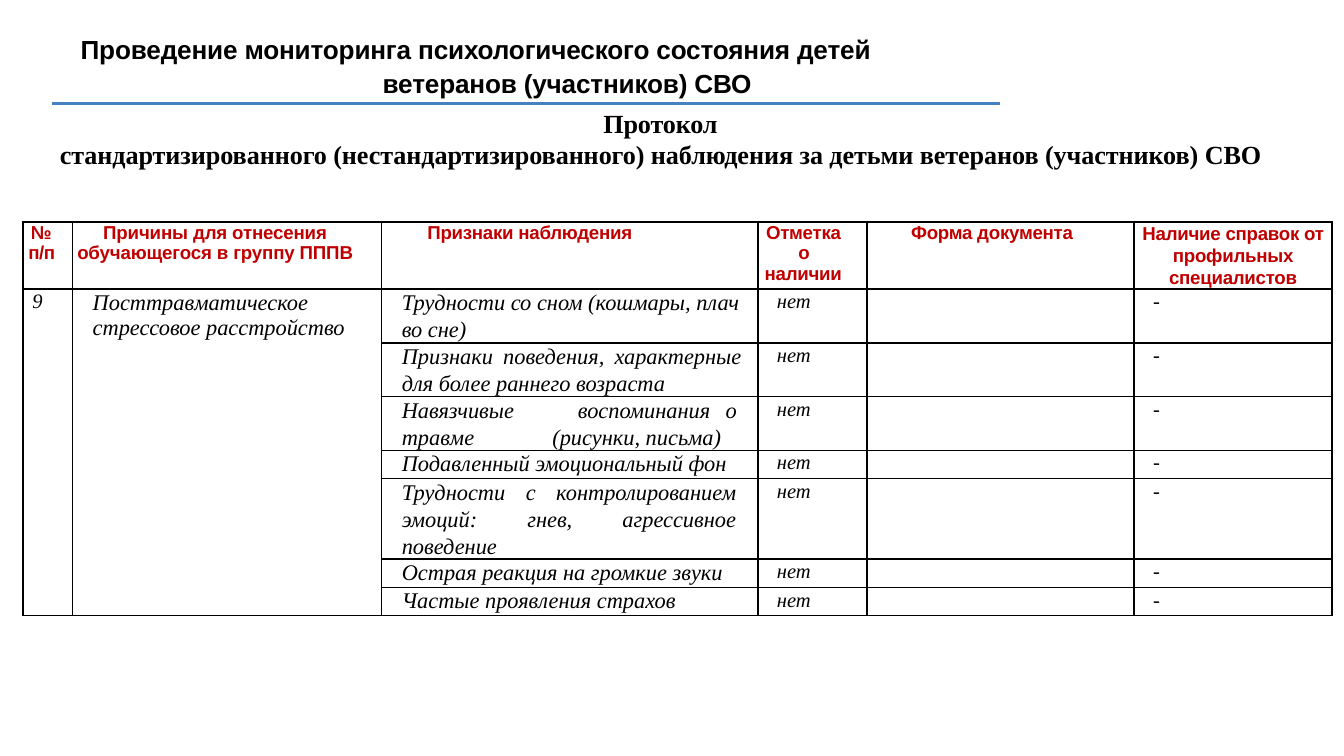
from lxml.etree import SubElement
from pptx import Presentation
from pptx.dml.color import RGBColor
from pptx.enum.shapes import MSO_CONNECTOR
from pptx.enum.text import MSO_ANCHOR, PP_ALIGN as AL
from pptx.oxml.ns import qn
from pptx.util import Inches, Pt

BLACK, RED, BLUE = "000000", "C00000", "4480C2"
SANS, SERIF = "Arial", "Times New Roman"
SLIDE_WIDTH = 10
SLIDE_HEIGHT = SLIDE_WIDTH * 9 / 16

TITLE = [
    dict(text="Проведение мониторинга психологического состояния детей",
         left=0.01, before=1.1),
    dict(text="ветеранов (участников) СВО", align=AL.CENTER, before=1.1),
]
SUBTITLE = [
    dict(text="Протокол", align=AL.CENTER, before=1.1),
    dict(text="стандартизированного (нестандартизированного) наблюдения "
              "за детьми ветеранов (участников) СВО", align=AL.CENTER, spc=-0.05),
]
HEADERS = [
    [dict(text="№", left=0.06, spc=-0.5), dict(text="п/п", left=0.04, spc=-0.2)],
    [dict(text=t, align=AL.CENTER, right=0.18, spc=-0.05)
     for t in ("Причины для отнесения", "обучающегося в группу ПППВ")],
    [dict(text="Признаки наблюдения", left=0.34)],
    [dict(text="Отметка", left=0.06), dict(text="о наличии", left=0.05, first=0.25)],
    [dict(text="Форма документа", left=0.33)],
    [dict(text="Наличие справок от профильных специалистов",
          align=AL.CENTER, left=0.04, right=0.04, line=12)],
]
NUMBER = "9"
REASON = ["Посттравматическое", "стрессовое расстройство"]
SIGNS = [  # text, row height in text lines, paragraph options
    ("Трудности со сном (кошмары, плач во сне)", 2, {}),
    ("Признаки поведения, характерные для более раннего возраста", 2,
     dict(align=AL.JUSTIFY, right=0.12)),
    ("Навязчивые\t\tвоспоминания\tо травме\t(рисунки, письма)", 2,
     dict(tabs=(1.12, 1.31, 2.41))),
    ("Подавленный эмоциональный фон", 1, {}),
    ("Трудности с контролированием эмоций: гнев, агрессивное поведение", 3,
     dict(align=AL.JUSTIFY, right=0.16)),
    ("Острая реакция на громкие звуки", 1, {}),
    ("Частые проявления страхов", 1, {}),
]
MARK, CERTIFICATE = "нет", "-"
COLUMNS = (0.37, 2.3, 2.8, 0.81, 1.99, 1.47)
HEADER_HEIGHT, LINE_HEIGHT = 0.5, 0.2

HEADER_STYLE = dict(font=SANS, size=10, color=RED, bold=True, line=11.8)
BODY_STYLE = dict(font=SERIF, size=12, italic=True, left=0.15, line=14.4, spc=0)
SMALL_STYLE = dict(BODY_STYLE, size=11, left=0.14, line=12.9)


def rgb(color):
    return RGBColor.from_string(color)


def write_paragraph(p, text, font, size, color=BLACK, bold=False, italic=False,
                    align=AL.LEFT, left=0, right=0, first=0, line=None,
                    before=0, spc=-0.1, tabs=()):
    """Lengths are inches; size, line, before and spc are points."""
    p.alignment = align
    p.space_before = Pt(before)
    p.line_spacing = Pt(line) if line else 1.0
    pPr = p._p.get_or_add_pPr()
    for name, value in (("marL", left), ("marR", right), ("indent", first)):
        if value:
            pPr.set(name, str(Inches(value)))
    if tabs:
        tab_list = SubElement(pPr, qn("a:tabLst"))
        for pos in tabs:
            SubElement(tab_list, qn("a:tab"), pos=str(Inches(pos)), algn="l")
    if not text:
        SubElement(p._p, qn("a:endParaRPr"), sz=str(size * 100))
        return
    r = p.add_run()
    r.text = text
    f = r.font
    f.name, f.size, f.bold, f.italic = font, Pt(size), bold, italic
    f.color.rgb = rgb(color)
    r._r.get_or_add_rPr().set("spc", str(round(spc * 100)))


def write(tf, paragraphs, **style):
    for i, item in enumerate(paragraphs):
        p = tf.add_paragraph() if i else tf.paragraphs[0]
        options = {**style, **item}
        if i and options.get("line"):
            options["line"] -= 1
        write_paragraph(p, **options)


def place_text(sp, box, paragraphs, font):
    sp.left, sp.top, sp.width, sp.height = map(Inches, box)
    tf = sp.text_frame
    tf.word_wrap = True
    tf.vertical_anchor = MSO_ANCHOR.TOP
    tf.margin_left = tf.margin_right = tf.margin_bottom = 0
    tf.margin_top = Inches(0.01)
    write(tf, paragraphs, font=font, size=14, bold=True)


def format_cell(cell):
    """Remove margins and fill, and draw a black border on every side."""
    cell.margin_left = cell.margin_right = cell.margin_top = cell.margin_bottom = 0
    tcPr = cell._tc.get_or_add_tcPr()
    for side in ("lnL", "lnR", "lnT", "lnB"):
        ln = SubElement(tcPr, qn("a:" + side), w=str(Pt(1)))
        fill = SubElement(ln, qn("a:solidFill"))
        SubElement(fill, qn("a:srgbClr"), val=BLACK)
    cell.fill.background()


def add_protocol_table(s):
    heights = [HEADER_HEIGHT] + [max(n * LINE_HEIGHT, 0.21) for _, n, _ in SIGNS]
    frame = s.shapes.add_table(len(heights), len(COLUMNS), Inches(0.17), Inches(1.65),
                               Inches(sum(COLUMNS)), Inches(sum(heights)))
    table = frame.table
    table.first_row = table.horz_banding = False
    for column, width in zip(table.columns, COLUMNS):
        column.width = Inches(width)
    for row, height in zip(table.rows, heights):
        row.height = Inches(height)
    for cell in table.iter_cells():
        format_cell(cell)
    for col in (0, 1):
        table.cell(1, col).merge(table.cell(len(SIGNS), col))

    for col, paragraphs in enumerate(HEADERS):
        write(table.cell(0, col).text_frame, paragraphs, **HEADER_STYLE)
    for row, (sign, lines, options) in enumerate(SIGNS, 1):
        number = dict(text=NUMBER if row == 1 else "", left=0.07)
        reason = [dict(text=t) for t in (REASON if row == 1 else [""])]
        sign_line = 13.8 if lines == 1 else 14.4
        contents = [
            ([number], SMALL_STYLE),
            (reason, BODY_STYLE),
            ([dict(text=sign, line=sign_line, **options)], BODY_STYLE),
            ([dict(text=MARK)], SMALL_STYLE),
            ([dict(text="")], SMALL_STYLE),
            ([dict(text=CERTIFICATE)], SMALL_STYLE),
        ]
        for col, (paragraphs, style) in enumerate(contents):
            write(table.cell(row, col).text_frame, paragraphs, **style)


def main():
    prs = Presentation()
    prs.slide_width, prs.slide_height = Inches(SLIDE_WIDTH), Inches(SLIDE_HEIGHT)
    s = prs.slides.add_slide(prs.slide_layouts[5])
    place_text(s.shapes.title, (0.59, 0.24, 7.25, 0.5), TITLE, SANS)

    rule = s.shapes.add_connector(MSO_CONNECTOR.STRAIGHT, Inches(0.39), Inches(0.77),
                                  Inches(7.44), Inches(0.77))
    rule.line.color.rgb = rgb(BLUE)
    rule.line.width = Pt(1.5)
    SubElement(rule._element.spPr, qn("a:effectLst"))

    subtitle = s.shapes.add_textbox(0, 0, 0, 0)
    place_text(subtitle, (0.4, 0.79, 9.03, 0.5), SUBTITLE, SERIF)
    add_protocol_table(s)
    prs.save("out.pptx")


if __name__ == "__main__":
    main()
